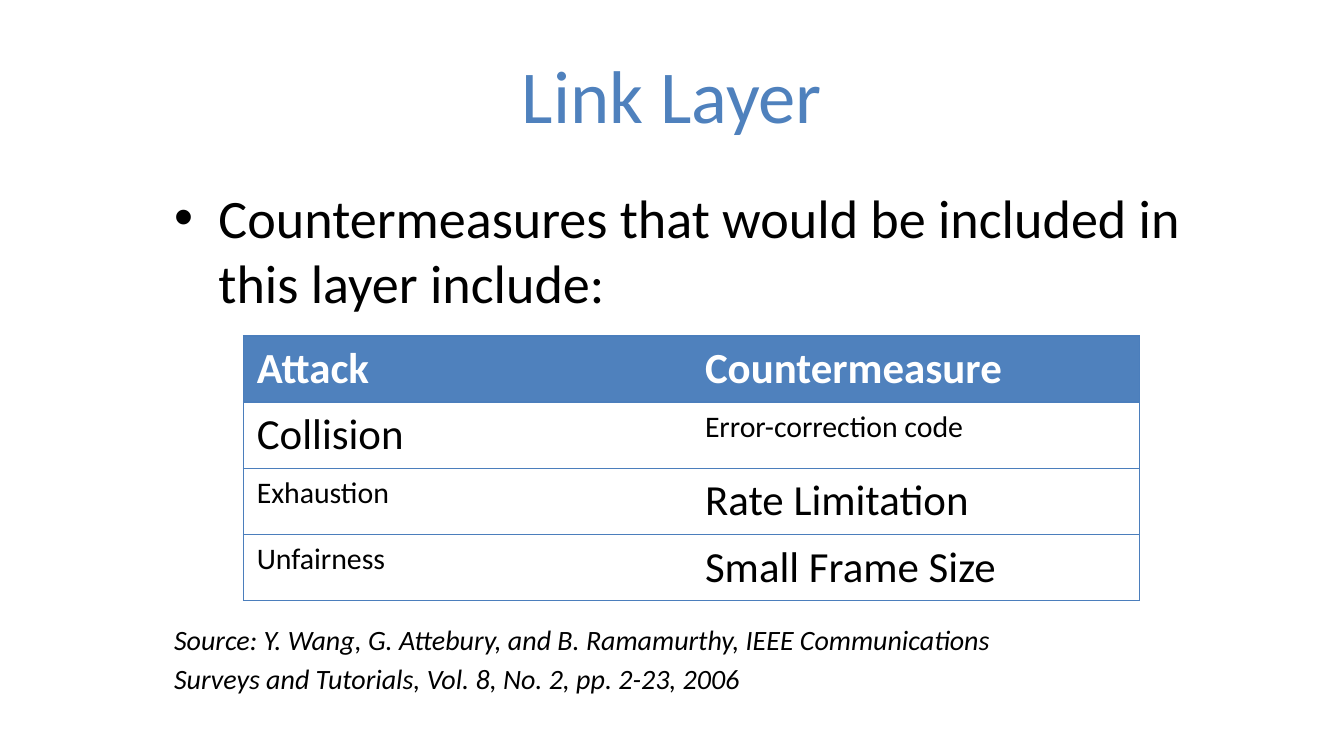
from dataclasses import dataclass

from lxml.etree import SubElement
from pptx import Presentation
from pptx.dml.color import RGBColor
from pptx.enum.text import MSO_ANCHOR, MSO_AUTO_SIZE, PP_ALIGN
from pptx.oxml.ns import qn
from pptx.util import Cm, Pt

FONT = "Calibri"
BLUE, BORDER, BLACK, WHITE = "4F81BD", "4B7EBC", "000000", "FFFFFF"
LARGE, SMALL = 23, 16


@dataclass
class Entry:
    text: str
    size: float = LARGE


@dataclass
class TextBlock:
    left: float
    top: float
    width: float
    height: float
    lines: list[str]
    size: float
    italic: bool = False
    bullet: bool = False


ROWS = [
    [Entry("Attack"), Entry("Countermeasure")],
    [Entry("Collision"), Entry("Error-correction code", SMALL)],
    [Entry("Exhaustion", SMALL), Entry("Rate Limitation")],
    [Entry("Unfairness", SMALL), Entry("Small Frame Size")],
]

BLOCKS = [
    TextBlock(3.05, 3.38, 21.08, 2.8,
              ["Countermeasures that would be included in this layer include:"],
              29, bullet=True),
    TextBlock(3.05, 11.65, 21.08, 1.7,
              ["Source: Y. Wang, G. Attebury, and B. Ramamurthy, IEEE Communications",
               "Surveys and Tutorials, Vol. 8, No. 2, pp. 2-23, 2006"],
              15, italic=True),
]


def color(value: str) -> RGBColor:
    return RGBColor.from_string(value)


def format_span(span, size: float, fill: str, bold=False, italic=False) -> None:
    formats = {"name": FONT, "size": Pt(size), "bold": bold, "italic": italic}
    for name, value in formats.items():
        setattr(span.font, name, value)
    span.font.color.rgb = color(fill)


def format_frame(frame, anchor) -> None:
    formats = {"word_wrap": True, "auto_size": MSO_AUTO_SIZE.NONE,
               "vertical_anchor": anchor,
               "margin_left": Cm(0.24), "margin_right": Cm(0.24),
               "margin_top": Cm(0.11), "margin_bottom": Cm(0.11)}
    for name, value in formats.items():
        setattr(frame, name, value)


def add_bullet(para) -> None:
    properties = para._p.get_or_add_pPr()
    indent = Cm(0.84)
    properties.set("marL", str(indent))
    properties.set("indent", str(-indent))
    SubElement(properties, qn("a:buFont"), typeface="Arial")
    SubElement(properties, qn("a:buChar"), char="•")


def draw_block(page, block: TextBlock) -> None:
    box = page.shapes.add_textbox(Cm(block.left), Cm(block.top),
                                  Cm(block.width), Cm(block.height))
    format_frame(box.text_frame, MSO_ANCHOR.TOP)
    for index, line in enumerate(block.lines):
        para = box.text_frame.paragraphs[0]
        if index:
            para = box.text_frame.add_paragraph()
            para.space_before = Pt(block.size * 0.2)
        if block.bullet:
            add_bullet(para)
        span = para.add_run()
        span.text = line
        format_span(span, block.size, BLACK, italic=block.italic)


def draw_border(cell, side: str, visible: bool) -> None:
    line = SubElement(cell._tc.get_or_add_tcPr(), qn(f"a:ln{side}"),
                      w=str(Pt(0.75)))
    if visible:
        fill = SubElement(line, qn("a:solidFill"))
        SubElement(fill, qn("a:srgbClr"), val=BORDER)
    else:
        SubElement(line, qn("a:noFill"))


def draw_table(page, rows: list[list[Entry]]) -> None:
    row_height, column_width = Cm(1.25), Cm(8.47)
    columns = len(rows[0])
    table = page.shapes.add_table(len(rows), columns, Cm(4.6), Cm(6.35),
                                  column_width * columns,
                                  row_height * len(rows)).table
    table.horz_banding = False
    for column in table.columns:
        column.width = column_width
    for row_index, entries in enumerate(rows):
        table.rows[row_index].height = row_height
        header = row_index == 0
        for column_index, entry in enumerate(entries):
            cell = table.cell(row_index, column_index)
            # Horizontal rules everywhere, vertical ones on the outside only
            borders = {"L": column_index == 0, "R": column_index == columns - 1,
                       "T": True, "B": True}
            for side, visible in borders.items():
                draw_border(cell, side, visible)
            if header:
                cell.fill.solid()
                cell.fill.fore_color.rgb = color(BLUE)
            else:
                cell.fill.background()
            span = cell.text_frame.paragraphs[0].add_run()
            span.text = entry.text
            format_span(span, entry.size, WHITE if header else BLACK, bold=header)


def draw_title(page, text: str) -> None:
    title = page.shapes.title
    place = {"left": Cm(1.27), "top": Cm(0.58), "width": Cm(22.86), "height": Cm(2.39)}
    for name, value in place.items():
        setattr(title, name, value)
    format_frame(title.text_frame, MSO_ANCHOR.MIDDLE)
    para = title.text_frame.paragraphs[0]
    para.alignment = PP_ALIGN.CENTER
    span = para.add_run()
    span.text = text
    format_span(span, 40, BLUE)


def main() -> None:
    deck = Presentation()
    deck.slide_width, deck.slide_height = Cm(25.4), Cm(14.29)
    page = deck.slides.add_slide(deck.slide_layouts[5])

    # Heading, statement with its source, and table
    draw_title(page, "Link Layer")
    for block in BLOCKS:
        draw_block(page, block)
    draw_table(page, ROWS)

    deck.save("out.pptx")


if __name__ == "__main__":
    main()
